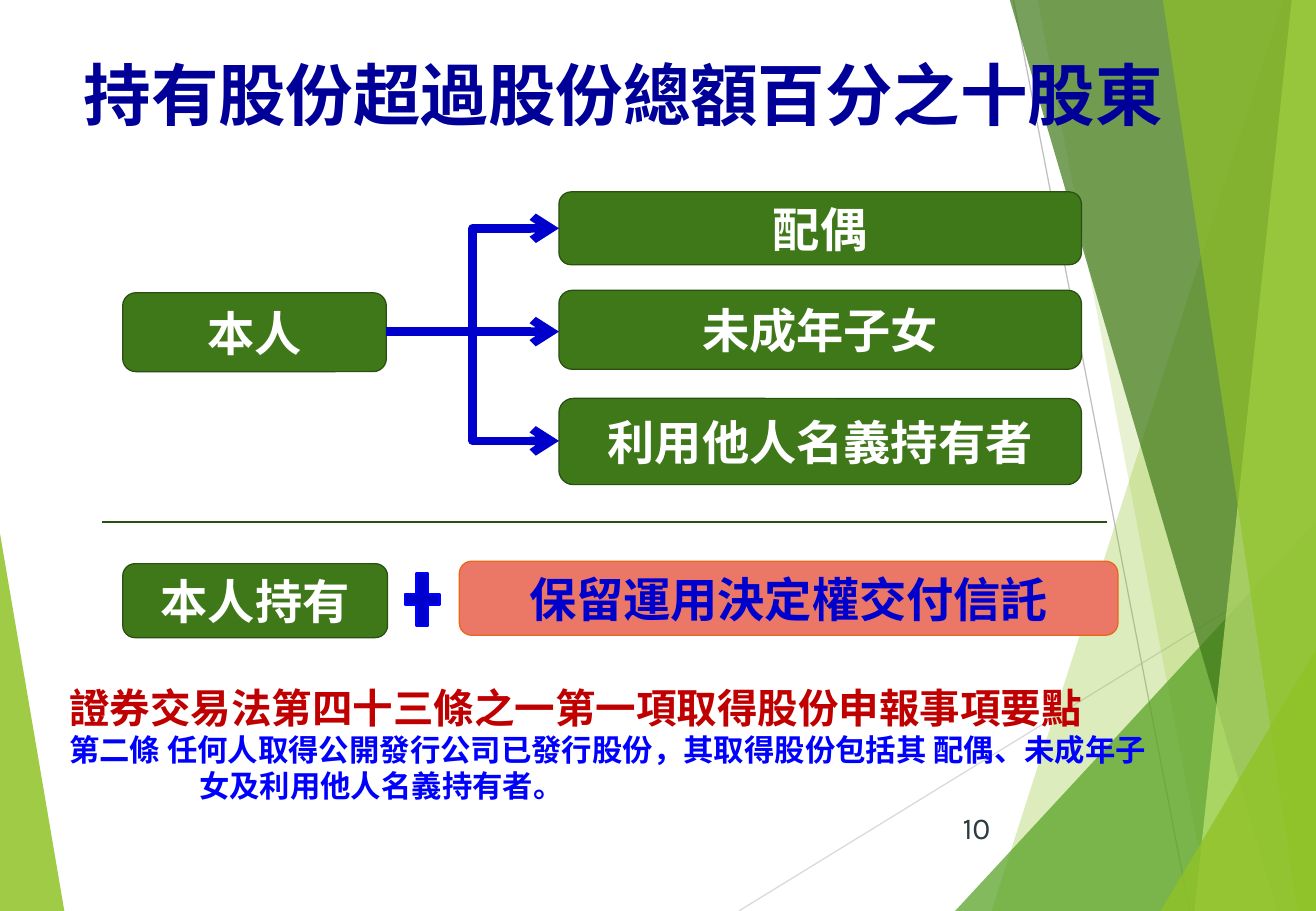
from pptx import Presentation
from pptx.dml.color import RGBColor
from pptx.enum.shapes import MSO_CONNECTOR as Link, MSO_SHAPE as Preset
from pptx.enum.text import MSO_ANCHOR as Anchor, PP_ALIGN as Align
from pptx.oxml.ns import qn
from pptx.util import Inches, Pt
from lxml.etree import SubElement

WIDTH, HEIGHT = 10.83, 7.5
CJK = "Noto Sans CJK SC"
GREEN, DARK_GREEN, LIME, BLUE = "3F7819", "2A5010", "90C226", "0000CC"

# Background facets: corner points, colour, opacity in percent
LEFT_FACET = ([(0, 4.39), (0.53, HEIGHT), (0, HEIGHT)], LIME, 85)
RIGHT_FACETS = [
    ([(10.56, 0), (8.16, HEIGHT), (WIDTH, HEIGHT), (WIDTH, 0)], LIME, 30),
    ([(8.54, 0), (9.96, HEIGHT), (WIDTH, HEIGHT), (WIDTH, 0)], LIME, 20),
    ([(7.86, HEIGHT), (WIDTH, 4.29), (WIDTH, HEIGHT)], "54A021", 72),
    ([(8.31, 0), (10.51, HEIGHT), (WIDTH, HEIGHT), (WIDTH, 0)], GREEN, 70),
    ([(10.63, 0), (9.83, HEIGHT), (WIDTH, HEIGHT), (WIDTH, 0)], "C0E474", 70),
    ([(9.57, 0), (10.68, HEIGHT), (WIDTH, HEIGHT), (WIDTH, 0)], LIME, 65),
    ([(9.55, HEIGHT), (WIDTH, 5.35), (WIDTH, HEIGHT)], LIME, 80),
]

# Holders: text, top, height
HOLDERS = [
    ("配偶", 1.58, 0.6),
    ("未成年子女", 2.39, 0.65),
    ("利用他人名義持有者", 3.28, 0.71),
]


def rgb(hex_code):
    return RGBColor.from_string(hex_code)


def write(paragraph, text, size=28, color="FFFFFF", bold=True, font=CJK,
          align=Align.LEFT, hanging=0):
    paragraph.alignment = align
    if hanging:
        props = paragraph._p.get_or_add_pPr()
        props.set("marL", str(Inches(hanging)))
        props.set("indent", str(-Inches(hanging)))
    run = paragraph.add_run()
    run.text = text
    run.font.size = Pt(size)
    run.font.bold = bold
    run.font.name = font
    run.font.color.rgb = rgb(color)
    SubElement(run._r.get_or_add_rPr(), qn("a:ea")).set("typeface", font)


def add_facet(slide, corners, color, opacity):
    points = [(Inches(x), Inches(y)) for x, y in corners]
    outline = slide.shapes.build_freeform(*points[0])
    outline.add_line_segments(points[1:], close=True)
    facet = outline.convert_to_shape()
    facet.shadow.inherit = False
    facet.line.fill.background()
    facet.fill.solid()
    facet.fill.fore_color.rgb = rgb(color)
    shade = facet._element.spPr.find(".//" + qn("a:srgbClr"))
    SubElement(shade, qn("a:alpha")).set("val", str(opacity * 1000))


def add_link(slide, start, end, color, width, kind=Link.STRAIGHT, arrow=False):
    link = slide.shapes.add_connector(
        kind, *[Inches(value) for value in (*start, *end)])
    link.line.color.rgb = rgb(color)
    link.line.width = Pt(width)
    if arrow:
        SubElement(link.line._get_or_add_ln(), qn("a:tailEnd")).set("type", "arrow")
    SubElement(link._element.spPr, qn("a:effectLst"))


def add_block(slide, preset, area, fill, border, border_width=0.75):
    block = slide.shapes.add_shape(preset, *[Inches(value) for value in area])
    block.shadow.inherit = False
    block.fill.solid()
    block.fill.fore_color.rgb = rgb(fill)
    block.line.color.rgb = rgb(border)
    block.line.width = Pt(border_width)
    return block


def add_label(slide, text, area, fill=GREEN, border=DARK_GREEN, color="FFFFFF"):
    frame = add_block(slide, Preset.ROUNDED_RECTANGLE, area, fill, border).text_frame
    frame.word_wrap = False
    frame.vertical_anchor = Anchor.MIDDLE
    write(frame.paragraphs[0], text, color=color, align=Align.CENTER)


def add_text_frame(slide, area, anchor=Anchor.TOP):
    frame = slide.shapes.add_textbox(*[Inches(value) for value in area]).text_frame
    frame.word_wrap = True
    frame.vertical_anchor = anchor
    return frame


def add_background(slide):
    add_facet(slide, *LEFT_FACET)
    add_link(slide, (6.08, HEIGHT), (WIDTH, 4.58), "D9D9D9", 0.75)
    add_link(slide, (8.34, 0), (9.79, HEIGHT), "BFBFBF", 0.75)
    for facet in RIGHT_FACETS:
        add_facet(slide, *facet)


def main():
    deck = Presentation()
    deck.slide_width, deck.slide_height = Inches(WIDTH), Inches(HEIGHT)
    slide = deck.slides.add_slide(deck.slide_layouts[6])
    add_background(slide)

    # Page number and title
    page = add_text_frame(slide, (7.64, 6.61, 0.61, 0.4), Anchor.MIDDLE)
    write(page.paragraphs[0], "10", size=18, color="2C3C43", bold=False,
          font="Karla", align=Align.RIGHT)
    title = add_text_frame(slide, (0.59, 0.39, 10.2, 1.25))
    write(title.paragraphs[0], "持有股份超過股份總額百分之十股東", size=40, color="000099")

    # Legal basis
    law = add_text_frame(slide, (0.47, 5.57, 9.3, 1.11))
    write(law.paragraphs[0], "證券交易法第四十三條之一第一項取得股份申報事項要點",
          size=24, color="C00000", hanging=0.58)
    write(law.add_paragraph(),
          "第二條 任何人取得公開發行公司已發行股份，其取得股份包括其 配偶、未成年子女及利用他人名義持有者。",
          size=18, color="0000FF", hanging=1.07)

    # The person and the related holders
    add_label(slide, "本人", (1.01, 2.41, 2.17, 0.65))
    for holder, top, height in HOLDERS:
        add_label(slide, holder, (4.6, top, 4.3, height))
    person_edge = (3.18, 2.73)
    for target in (1.88, 3.63):
        add_link(slide, person_edge, (4.6, target), BLUE, 5, Link.ELBOW, arrow=True)
    add_link(slide, (3.88, 2.73), (4.6, 2.73), BLUE, 5, arrow=True)

    # Own shares plus trust
    add_link(slide, (0.84, 4.3), (9.11, 4.3), DARK_GREEN, 1)
    add_label(slide, "本人持有", (1.01, 4.64, 2.18, 0.61))
    add_block(slide, Preset.MATH_PLUS, (3.28, 4.64, 0.39, 0.59), BLUE, "0000FF", 1.5)
    add_label(slide, "保留運用決定權交付信託", (3.78, 4.62, 5.42, 0.61),
              fill="EB7766", border="E76618", color=BLUE)

    deck.save("out.pptx")


if __name__ == "__main__":
    main()
